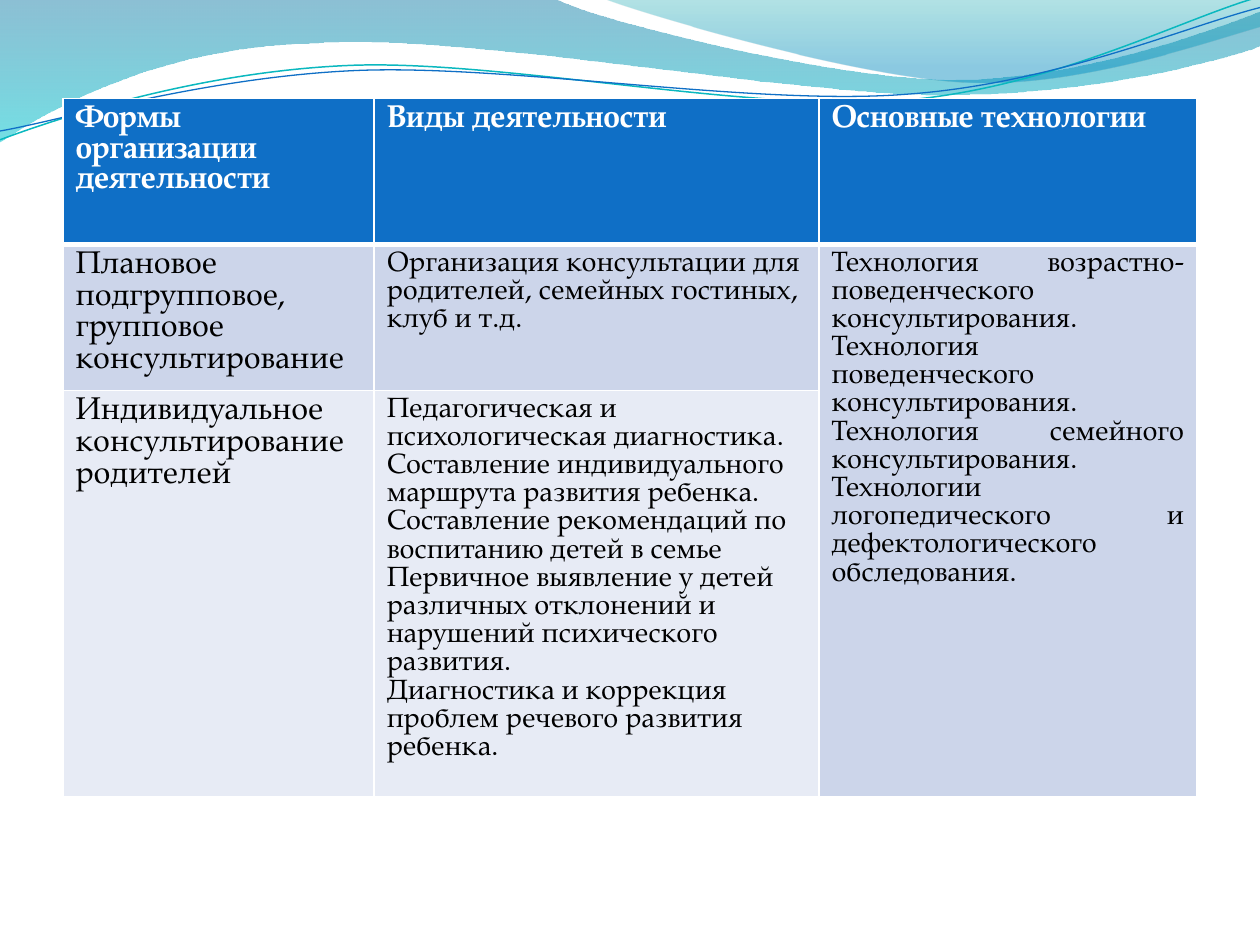
from lxml.etree import SubElement
from pptx import Presentation
from pptx.dml.color import RGBColor
from pptx.enum.text import PP_ALIGN as Align
from pptx.oxml import parse_xml
from pptx.oxml.ns import nsdecls, qn
from pptx.util import Inches, Pt

WIDTH, HEIGHT = 10, 7.5
FONT = "TeX Gyre Pagella"
COLUMNS = [2.47, 3.53, 3]
ROWS = [1.16, 1.16, 2.91]

HEADER = {"size": Pt(18), "bold": True}
FORM = {"size": Pt(18), "bold": False}
DETAIL = {"size": Pt(16), "bold": False}

HEADINGS = ["Формы организации деятельности", "Виды деятельности", "Основные технологии"]
FORMS = [
    "Плановое подгрупповое, групповое консультирование",
    "Индивидуальное консультирование родителей",
]
ACTIVITIES = [
    ["Организация консультации для родителей, семейных гостиных, клуб и т.д."],
    [
        "Педагогическая и психологическая диагностика.",
        "Составление индивидуального маршрута развития ребенка. "
        "Составление рекомендаций по воспитанию детей в семье",
        "Первичное выявление у детей различных отклонений и нарушений психического развития.",
        "Диагностика и коррекция проблем речевого развития ребенка.",
    ],
]
TECHNOLOGIES = [
    "Технология возрастно-поведенческого консультирования.",
    "Технология поведенческого консультирования.",
    "Технология семейного консультирования.",
    "Технологии логопедического и дефектологического обследования.",
]

LEFT_WAVE = [
    (0, 0), (4.4, -0.01),
    (4.76, 0.17, 6.64, 0.63, 7.58, 0.63), (8.53, 0.63, 9.58, 0.26, 10, 0.09),
    (10.01, 0.36),
    (9.83, 0.44, 8.7, 0.76, 7.46, 0.75), (6.22, 0.75, 3.82, 0.28, 2.57, 0.34),
    (1.29, 0.36, 0.46, 0.83, -0.01, 1.13),
]
RIGHT_WAVE = [
    (4.79, -0.01),
    (5.09, 0.11, 6.82, 0.62, 7.69, 0.65), (8.56, 0.69, 9.61, 0.32, 10, 0.21),
    (10, 0),
]
TEAL_CURVE = [
    (0, 1.11),
    (0.48, 0.93, 1.58, 0.57, 2.77, 0.52), (3.95, 0.47, 5.93, 0.89, 7.13, 0.8),
    (8.33, 0.71, 9.38, 0.15, 9.98, -0.02),
]
BLUE_CURVE = [
    (0, 1.04),
    (0.47, 0.96, 1.64, 0.61, 2.83, 0.56), (4.03, 0.51, 5.97, 0.84, 7.17, 0.75),
    (8.36, 0.67, 9.41, 0.21, 10, 0.06),
]


def color(value):
    return RGBColor.from_string(value)


def bend(segment, curve, left, top):
    segment.clear()
    segment.tag = qn("a:cubicBezTo")
    for x, y in zip(curve[::2], curve[1::2]):
        SubElement(segment, qn("a:pt"), x=str(Inches(x) - left), y=str(Inches(y) - top))


def add_outline(slide, outline, closed):
    first, *rest = [tuple(Inches(length) for length in piece[-2:]) for piece in outline]
    builder = slide.shapes.build_freeform(*first)
    builder.add_line_segments(rest, close=closed)
    ribbon = builder.convert_to_shape()
    ribbon.shadow.inherit = False
    segments = list(ribbon.element.spPr.iter(qn("a:lnTo")))
    for segment, piece in zip(segments, outline[1:]):
        if len(piece) > 2:
            bend(segment, piece, ribbon.left, ribbon.top)
    return ribbon


def add_wave(slide, outline, stops):
    wave = add_outline(slide, outline, True)
    wave.line.fill.background()
    wave.fill.gradient()
    wave.fill.gradient_angle = 270
    for stop, (position, tint, _) in zip(wave.fill.gradient_stops, stops):
        stop.position = position
        stop.color.rgb = color(tint)
    tints = wave.element.spPr.iter(qn("a:srgbClr"))
    for tint, (_, _, opacity) in zip(tints, stops):
        SubElement(tint, qn("a:alpha"), val=str(opacity * 1000))


def add_curve(slide, outline, tint, weight):
    curve = add_outline(slide, outline, False)
    curve.fill.background()
    curve.line.color.rgb = color(tint)
    curve.line.width = Pt(weight)


def set_borders(cell, bottom):
    properties = cell._tc.get_or_add_tcPr()
    for index, (side, weight) in enumerate([("L", 1), ("R", 1), ("T", 1), ("B", bottom)]):
        properties.insert(index, parse_xml(
            f'<a:ln{side} {nsdecls("a")} w="{Pt(weight)}"><a:solidFill>'
            f'<a:srgbClr val="FFFFFF"/></a:solidFill></a:ln{side}>'
        ))


def fill_cell(cell, texts, look, ink, background, align=Align.LEFT, bottom=1):
    cell.fill.solid()
    cell.fill.fore_color.rgb = color(background)
    set_borders(cell, bottom)
    frame = cell.text_frame
    for index, text in enumerate(texts):
        paragraph = frame.add_paragraph() if index else frame.paragraphs[0]
        paragraph.alignment = align
        run = paragraph.add_run()
        run.text = text
        run.font.name = FONT
        run.font.color.rgb = color(ink)
        for name, value in look.items():
            setattr(run.font, name, value)


def add_activity_table(slide):
    frame = slide.shapes.add_table(
        len(ROWS), len(COLUMNS), Inches(WIDTH * 0.05), Inches(0.78),
        Inches(sum(COLUMNS)), Inches(sum(ROWS)),
    )
    table = frame.table
    for column, width in zip(table.columns, COLUMNS):
        column.width = Inches(width)
    for row, height in zip(table.rows, ROWS):
        row.height = Inches(height)
    for column, heading in enumerate(HEADINGS):
        fill_cell(table.cell(0, column), [heading], HEADER, "FFFFFF", "0F6FC6", bottom=3)
    bands = ["CCD5EA", "E7EBF5"]
    for row, (form, activities, band) in enumerate(zip(FORMS, ACTIVITIES, bands), 1):
        fill_cell(table.cell(row, 0), [form], FORM, "000000", band)
        fill_cell(table.cell(row, 1), activities, DETAIL, "000000", band)
    table.cell(2, 1).margin_bottom = Inches(0.27)
    technologies = table.cell(1, 2)
    technologies.merge(table.cell(2, 2))
    fill_cell(technologies, TECHNOLOGIES, DETAIL, "000000", bands[0], Align.JUSTIFY)


def main():
    deck = Presentation()
    deck.slide_width, deck.slide_height = Inches(WIDTH), Inches(HEIGHT)
    slide = deck.slides.add_slide(deck.slide_layouts[6])
    add_wave(slide, LEFT_WAVE, [(0, "0074A1", 45), (1, "00C6CF", 55)])
    add_wave(slide, RIGHT_WAVE, [(0, "00A1A9", 30), (0.8, "008BBF", 45)])
    add_curve(slide, TEAL_CURVE, "0AB8BF", 0.85)
    add_curve(slide, BLUE_CURVE, "0F6FC6", 0.75)
    add_activity_table(slide)
    deck.save("out.pptx")


if __name__ == "__main__":
    main()
